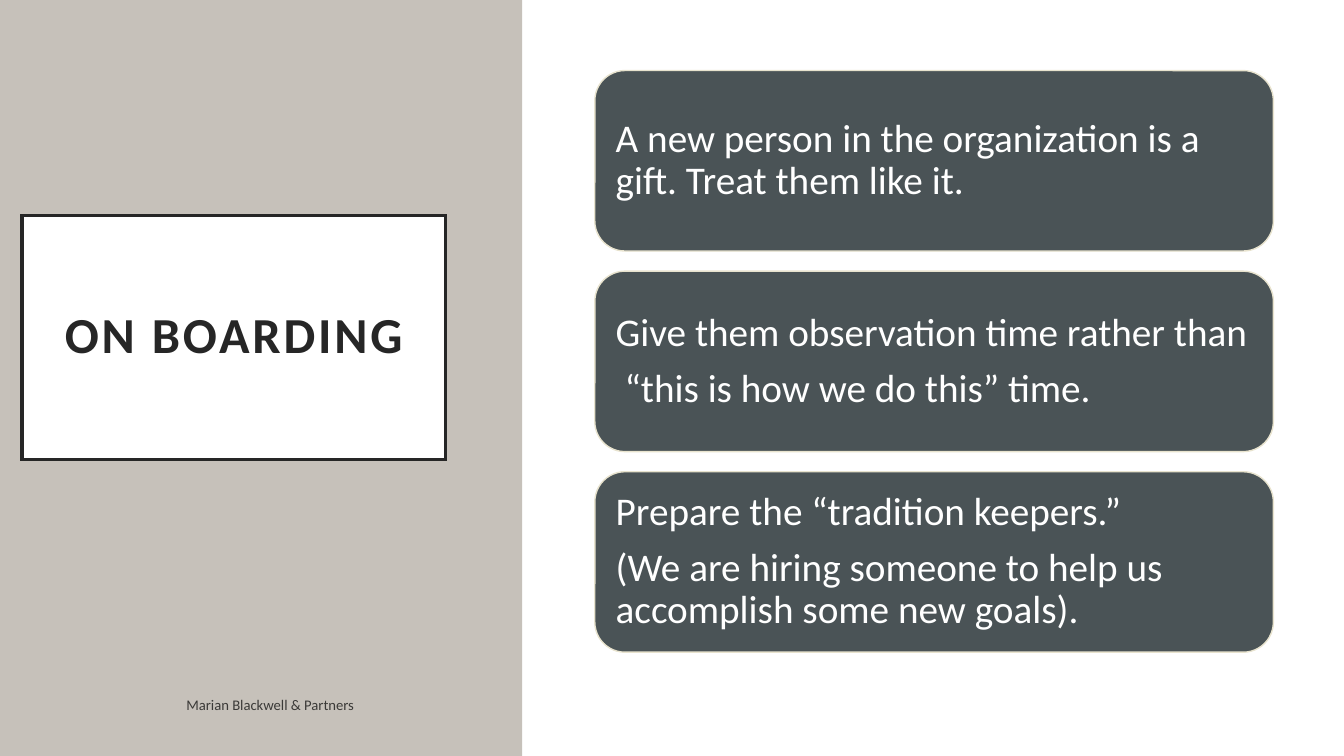
from dataclasses import dataclass

import lxml.etree
import pptx
import pptx.dml.color
import pptx.enum.shapes
import pptx.enum.text
import pptx.oxml.ns
import pptx.util
from pptx.util import Inches

MSO_SHAPE = pptx.enum.shapes.MSO_SHAPE
ALIGN = pptx.enum.text.PP_ALIGN


@dataclass(frozen=True)
class Theme:
    font: str = "Calibri"
    taupe: str = "C6C1BA"
    white: str = "FFFFFF"
    ink: str = "262626"
    slate: str = "4A5356"
    cream: str = "E8E3CE"
    footer_ink: str = "3B3A38"
    title_size: float = 36
    card_size: float = 28
    footer_size: float = 10.5
    title_tracking: int = 200
    paragraph_gap: float = 9.8


THEME = Theme()

CARDS = [
    ["A new person in the organization is a gift. Treat them like it."],
    ["Give them observation time rather than", " “this is how we do this” time."],
    [
        "Prepare the “tradition keepers.”",
        "(We are hiring someone to help us accomplish some new goals).",
    ],
]
CARD_LEFT, CARD_TOP, CARD_WIDTH, CARD_HEIGHT, CARD_GAP = 5.9, 0.7, 6.73, 1.79, 0.2


def rgb(value):
    return pptx.dml.color.RGBColor.from_string(value)


def paint(shape, fill, line=None, width=1):
    shape.fill.solid()
    shape.fill.fore_color.rgb = rgb(fill)
    if line:
        shape.line.color.rgb = rgb(line)
        shape.line.width = pptx.util.Pt(width)
    else:
        shape.line.fill.background()


def set_frame(frame, horizontal_inset, vertical_inset):
    frame.word_wrap = True
    frame.auto_size = pptx.enum.text.MSO_AUTO_SIZE.NONE
    frame.vertical_anchor = pptx.enum.text.MSO_ANCHOR.MIDDLE
    frame.margin_left = frame.margin_right = Inches(horizontal_inset)
    frame.margin_top = frame.margin_bottom = Inches(vertical_inset)


def write(frame, lines, size, color, align=ALIGN.LEFT, spacing=1.0, gap=0,
          bold=False, tracking=0):
    for index, line in enumerate(lines):
        paragraph = frame.add_paragraph() if index else frame.paragraphs[0]
        paragraph.alignment = align
        paragraph.line_spacing = spacing
        paragraph.space_after = pptx.util.Pt(gap)
        run = paragraph.add_run()
        run.text = line
        run.font.name = THEME.font
        run.font.size = pptx.util.Pt(size)
        run.font.bold = bold
        run.font.color.rgb = rgb(color)
        if tracking:
            run._r.get_or_add_rPr().set("spc", str(tracking))


def add_block(slide, preset, box, fill, line=None):
    block = slide.shapes.add_shape(preset, *map(Inches, box))
    block.shadow.inherit = False
    paint(block, fill, line)
    return block


def add_title(slide, text):
    title = slide.shapes.title
    slide.shapes.element.append(title.element)
    title.left, title.top = Inches(0.22), Inches(2.14)
    title.width, title.height = Inches(4.2), Inches(2.42)
    paint(title, THEME.white, THEME.ink, 2.5)
    outline = title.element.spPr.find(pptx.oxml.ns.qn("a:ln"))
    lxml.etree.SubElement(outline, pptx.oxml.ns.qn("a:miter"), lim="800000")
    set_frame(title.text_frame, 0.2, 0.2)
    write(title.text_frame, [text], THEME.title_size, THEME.ink, align=ALIGN.CENTER,
          spacing=0.9, bold=True, tracking=THEME.title_tracking)


def add_card(slide, top, lines):
    box = (CARD_LEFT, top, CARD_WIDTH, CARD_HEIGHT)
    card = add_block(slide, MSO_SHAPE.ROUNDED_RECTANGLE, box, THEME.slate, THEME.cream)
    set_frame(card.text_frame, 0.12, 0.12)
    write(card.text_frame, lines, THEME.card_size, THEME.white,
          spacing=0.9, gap=THEME.paragraph_gap)


def add_footer(slide, text):
    footer = slide.shapes.add_textbox(*map(Inches, (1.75, 6.82, 6.45, 0.35)))
    set_frame(footer.text_frame, 0.1, 0.05)
    write(footer.text_frame, [text], THEME.footer_size, THEME.footer_ink)


def main():
    deck = pptx.Presentation()
    deck.slide_width, deck.slide_height = Inches(13.33), Inches(7.5)
    slide = deck.slides.add_slide(deck.slide_layouts[5])
    add_block(slide, MSO_SHAPE.RECTANGLE, (0, 0, 5.18, 7.5), THEME.taupe)
    add_title(slide, "ON BOARDING")
    add_block(slide, MSO_SHAPE.RECTANGLE, (5.2, 0, 8.13, 7.5), THEME.white)
    for row, lines in enumerate(CARDS):
        add_card(slide, CARD_TOP + row * (CARD_HEIGHT + CARD_GAP), lines)
    add_footer(slide, "Marian Blackwell & Partners")
    deck.save("out.pptx")


if __name__ == "__main__":
    main()
